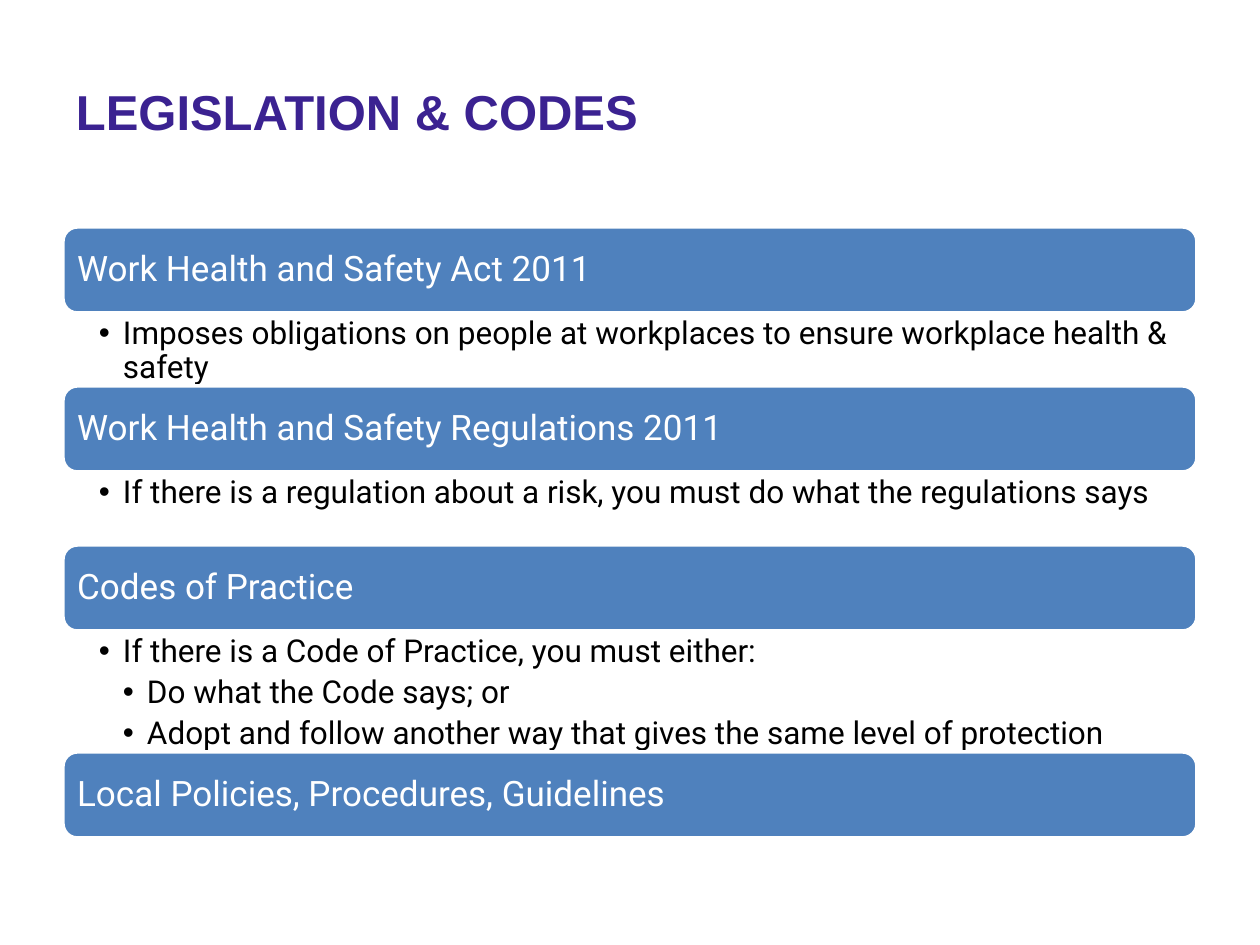
from lxml import etree
from pptx import Presentation
from pptx.dml.color import RGBColor
from pptx.enum.shapes import MSO_SHAPE
from pptx.enum.text import MSO_ANCHOR, PP_ALIGN
from pptx.oxml.ns import qn
from pptx.util import Pt

ROUND = MSO_SHAPE.ROUNDED_RECTANGLE
MID, TOP = MSO_ANCHOR.MIDDLE, MSO_ANCHOR.TOP
LEFT = PP_ALIGN.LEFT
INK = {"title": "3B2291", "bar": "4F81BD", "white": "FFFFFF", "text": "000000"}
PX = 914400 / 126


def px(*nums):
    return [round(n * PX) for n in nums]


def write(shape, lines, size=18, color="text", font="Roboto", bold=False,
          pad=(10, 10, 10, 10), anchor=MID, space=0.9, after=0):
    """Fill a shape with (level, text) lines; levels above 0 get a bullet."""
    frame = shape.text_frame
    frame.word_wrap = True
    frame.vertical_anchor = anchor
    (frame.margin_left, frame.margin_top,
     frame.margin_right, frame.margin_bottom) = px(*pad)
    for i, (level, text) in enumerate(lines):
        para = frame.add_paragraph() if i else frame.paragraphs[0]
        para.text = text
        para.level = level
        para.alignment = LEFT
        para.line_spacing = space
        para.space_after = Pt(after)
        if level:
            props = para._p.get_or_add_pPr()
            step = px(24)[0]
            props.set("marL", str(level * step))
            props.set("indent", str(-step))
            etree.SubElement(props, qn("a:buFont"), typeface="Arial")
            etree.SubElement(props, qn("a:buChar"), char="•")
        para.font.name = font
        para.font.size = Pt(size)
        para.font.bold = bold
        para.font.color.rgb = RGBColor.from_string(INK[color])


deck = Presentation()
deck.slide_width, deck.slide_height = px(1260, 945)
slide = deck.slides.add_slide(deck.slide_layouts[5])

# Title
title = slide.shapes.title
title.left, title.top, title.width, title.height = px(63, 66, 1134, 89)
write(title, [(0, "LEGISLATION & CODES")], size=28, color="title",
      font="Arial", bold=True, pad=(13, 6, 13, 6), space=1.0)

# Heading, list height, list lines
parts = [
    ("Work Health and Safety Act 2011", 73, [
        (1, "Imposes obligations on people at workplaces to ensure "
            "workplace health & safety")]),
    ("Work Health and Safety Regulations 2011", 73, [
        (1, "If there is a regulation about a risk, you must do what "
            "the regulations says")]),
    ("Codes of Practice", 121, [
        (1, "If there is a Code of Practice, you must either:"),
        (2, "Do what the Code says; or"),
        (2, "Adopt and follow another way that gives the same level "
            "of protection")]),
    ("Local Policies, Procedures, Guidelines", 0, []),
]

# Stack of bars, each followed by its list
left, wide, tall = 63, 1134, 86
top = 227
for head, high, lines in parts:
    bar = slide.shapes.add_shape(ROUND, *px(left, top, wide, tall))
    bar.shadow.inherit = False
    bar.fill.solid()
    bar.fill.fore_color.rgb = RGBColor.from_string(INK["bar"])
    bar.line.color.rgb = RGBColor.from_string(INK["white"])
    bar.line.width = Pt(2)
    write(bar, [(0, head)], size=20, color="white")
    top += tall
    if lines:
        box = slide.shapes.add_textbox(*px(left, top, wide, high))
        write(box, lines, pad=(36, 4, 18, 4), anchor=TOP, after=4)
    top += high

deck.save("out.pptx")
